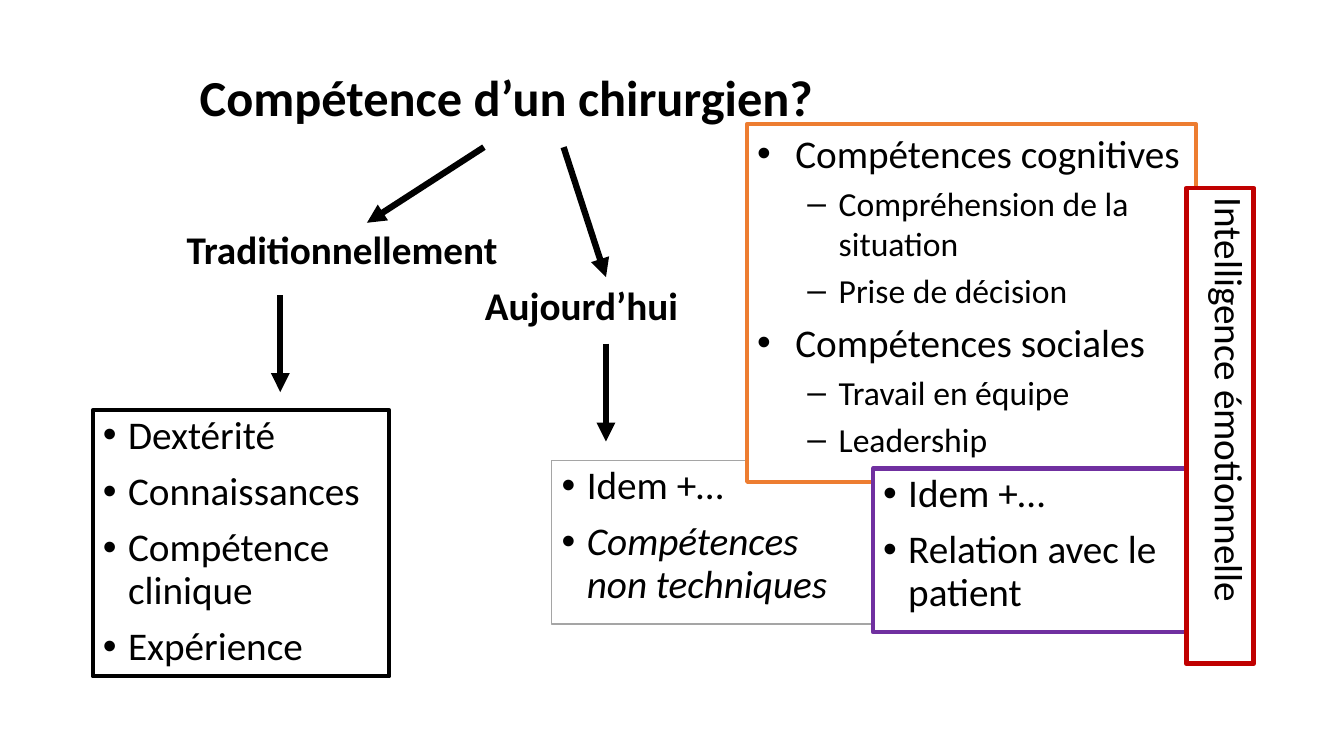
from lxml import etree
from pptx import Presentation
from pptx.dml.color import RGBColor
from pptx.enum import shapes, text
from pptx.oxml import ns
from pptx.util import Inches, Pt

TITLE = ("Compétence d’un chirurgien?", (1.88, 0.67, 6.5, 0.65))
HEADINGS = [
    (1, "Traditionnellement", (1.75, 2.06, 3.78, 0.7)),
    (3, "Aujourd’hui", (4.71, 2.66, 2.48, 0.65)),
]
LISTS = [
    (2, (0.92, 4.07, 2.94, 2.64), "000000", 3,
     ["Dextérité", "Connaissances", "Compétence clinique", "Expérience"], []),
    (4, (5.47, 4.57, 3.2, 1.62), "A5A5A5", 1,
     ["Idem +…", "Compétences non techniques"], ["Compétences non techniques"]),
]
ARROWS = [
    (4.8, 1.46, 3.64, 2.21),
    (2.78, 2.93, 2.78, 3.89),
    (6.01, 3.41, 6.01, 4.38),
    (5.59, 1.46, 6.01, 2.75),
]
SKILLS = [
    ("Compétences cognitives", ["Compréhension de la situation", "Prise de décision"]),
    ("Compétences sociales", ["Travail en équipe", "Leadership"]),
]
SKILLS_BOX = (7.41, 1.23, 4.45, 3.55)
PATIENT = ["Idem +…", "Relation avec le patient"]
PATIENT_BOX = (8.66, 4.65, 3.2, 1.62)
EMOTION = "Intelligence émotionnelle"
EMOTION_BOX = (9.74, 3.89, 4.72, 0.67)


def rgb(value):
    return RGBColor.from_string(value)


def place(sp, box):
    sp.left, sp.top, sp.width, sp.height = map(Inches, box)


def frame(sp, color, width):
    sp.fill.solid()
    sp.fill.fore_color.rgb = rgb("FFFFFF")
    sp.line.color.rgb = rgb(color)
    sp.line.width = Pt(width)


def prepare(sp, anchor):
    tf = sp.text_frame
    tf.word_wrap = True
    tf.auto_size = text.MSO_AUTO_SIZE.NONE
    tf.vertical_anchor = anchor
    return tf


def write(tf, words, size=28, bold=False, italic=False, spacing=0.9, before=10,
          level=0, bullet=None, indent=(0.25, -0.25)):
    first = not tf.paragraphs[0].runs
    p = tf.paragraphs[0] if first else tf.add_paragraph()
    p.alignment = text.PP_ALIGN.LEFT
    p.level = level
    p.line_spacing = spacing
    p.space_before = Pt(0 if first else before)
    if bullet:
        pPr = p._p.get_or_add_pPr()
        pPr.set("marL", str(Inches(indent[0])))
        pPr.set("indent", str(Inches(indent[1])))
        etree.SubElement(pPr, ns.qn("a:buFont"), typeface="Arial")
        etree.SubElement(pPr, ns.qn("a:buChar"), char=bullet)
    r = p.add_run()
    r.text = words
    r.font.name = "Calibri"
    r.font.size = Pt(size)
    r.font.bold = bold
    r.font.italic = italic
    r.font.color.rgb = rgb("000000")


def add_arrow(s, points):
    line = s.shapes.add_connector(shapes.MSO_CONNECTOR.STRAIGHT, *map(Inches, points))
    line.line.color.rgb = rgb("000000")
    line.line.width = Pt(4.5)
    etree.SubElement(line.line._get_or_add_ln(), ns.qn("a:tailEnd"), type="triangle")
    etree.SubElement(line._element.spPr, ns.qn("a:effectLst"))


def add_box(s, box, color, width):
    sp = s.shapes.add_textbox(*map(Inches, box))
    frame(sp, color, width)
    return sp, prepare(sp, text.MSO_ANCHOR.TOP)


def main():
    prs = Presentation()
    prs.slide_width, prs.slide_height = Inches(13.33), Inches(7.5)
    s = prs.slides.add_slide(prs.slide_layouts.get_by_name("Comparison"))
    holders = {sp.placeholder_format.idx: sp for sp in s.placeholders}

    words, box = TITLE
    place(s.shapes.title, box)
    write(prepare(s.shapes.title, text.MSO_ANCHOR.MIDDLE), words, size=36, bold=True)

    for idx, words, box in HEADINGS:
        place(holders[idx], box)
        write(prepare(holders[idx], text.MSO_ANCHOR.BOTTOM), words, bold=True)

    for idx, box, color, width, items, italics in LISTS:
        place(holders[idx], box)
        frame(holders[idx], color, width)
        tf = prepare(holders[idx], text.MSO_ANCHOR.TOP)
        for item in items:
            write(tf, item, italic=item in italics, bullet="•")

    for points in ARROWS:
        add_arrow(s, points)

    sp, tf = add_box(s, SKILLS_BOX, "ED7D31", 3)
    for skill, details in SKILLS:
        write(tf, skill, spacing=1.0, before=5.6, bullet="•", indent=(0.38, -0.38))
        for detail in details:
            write(tf, detail, size=24, spacing=1.0, before=4.8, level=1,
                  bullet="–", indent=(0.81, -0.31))

    sp, tf = add_box(s, PATIENT_BOX, "7030A0", 3.25)
    for item in PATIENT:
        write(tf, item, bullet="•")

    sp, tf = add_box(s, EMOTION_BOX, "C00000", 3.25)
    sp.rotation = 90
    write(tf, EMOTION)

    prs.save("out.pptx")


if __name__ == "__main__":
    main()
